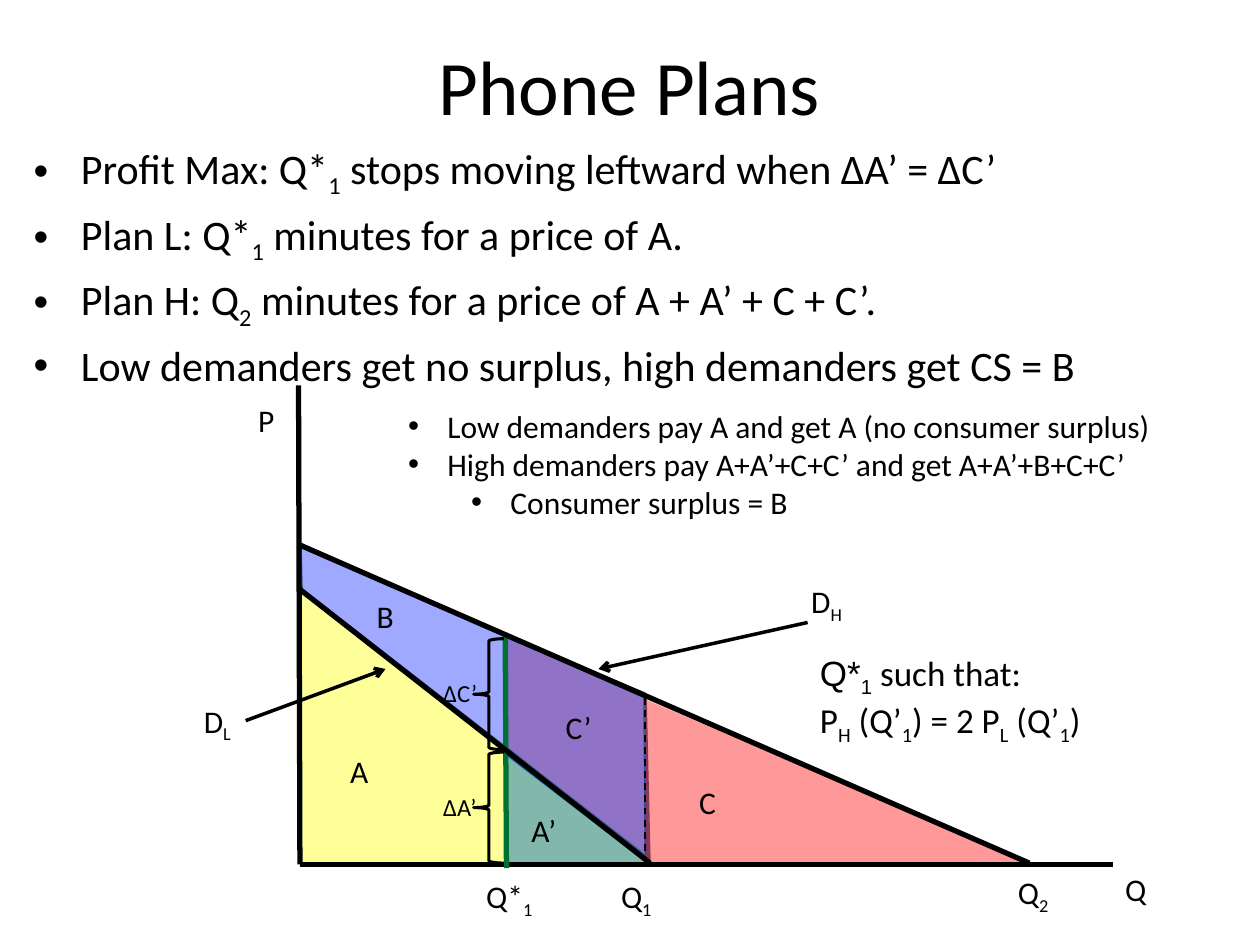
from lxml.etree import SubElement
from pptx import Presentation
from pptx.dml.color import RGBColor
from pptx.enum.dml import MSO_LINE
from pptx.enum.shapes import MSO_CONNECTOR, MSO_SHAPE
from pptx.enum.text import MSO_ANCHOR, MSO_AUTO_SIZE, PP_ALIGN
from pptx.oxml.ns import qn
from pptx.util import Pt

BLACK = RGBColor(0x00, 0x00, 0x00)
YELLOW = RGBColor(0xFF, 0xFF, 0x00)
CRIMSON = RGBColor(0xC0, 0x00, 0x00)
TEAL = RGBColor(0x00, 0x70, 0xC0)
BLUE = RGBColor(0x0D, 0x2A, 0xFF)
RED = RGBColor(0xFF, 0x00, 0x00)
GREEN = RGBColor(0x00, 0x70, 0x33)
OUTLINE = RGBColor(0x3A, 0x5F, 0x8C)
FONT = "Calibri"


def points(*values):
    return [Pt(v) for v in values]


def fill_area(sp, color, alpha):
    sp.shadow.inherit = False
    sp.fill.solid()
    sp.fill.fore_color.rgb = color
    clr = sp.fill._xPr.find(".//" + qn("a:srgbClr"))
    SubElement(clr, qn("a:alpha")).set("val", str(alpha * 1000))


def add_triangle(s, box, color, alpha):
    sp = s.shapes.add_shape(MSO_SHAPE.RIGHT_TRIANGLE, *points(*box))
    fill_area(sp, color, alpha)
    sp.line.fill.background()


def add_polygon(s, corners, color, alpha):
    start, *rest = [points(*c) for c in corners]
    builder = s.shapes.build_freeform(*start, scale=1.0)
    builder.add_line_segments(rest, close=True)
    sp = builder.convert_to_shape()
    fill_area(sp, color, alpha)
    sp.line.color.rgb = OUTLINE
    sp.line.width = Pt(2)


def add_line(s, ends, width=3, color=BLACK, dashed=False, arrow=False):
    ln = s.shapes.add_connector(MSO_CONNECTOR.STRAIGHT, *points(*ends))
    ln.line.color.rgb = color
    ln.line.width = Pt(width)
    if dashed:
        ln.line.dash_style = MSO_LINE.DASH
    if arrow:
        SubElement(ln.line._get_or_add_ln(), qn("a:tailEnd")).set("type", "arrow")
    SubElement(ln._element.spPr, qn("a:effectLst"))


def add_brace(s, top):
    sp = s.shapes.add_shape(MSO_SHAPE.LEFT_BRACE, *points(270.7, top, 17.3, 63.4))
    sp.shadow.inherit = False
    sp.fill.background()
    sp.line.color.rgb = BLACK
    sp.line.width = Pt(1.75)


def write_runs(p, text, size):
    p.font.name = FONT
    p.font.size = Pt(size)
    p.font.color.rgb = BLACK
    for i, part in enumerate(text.split("_")):
        if part:
            r = p.add_run()
            r.text = part
            if i % 2:
                r._r.get_or_add_rPr().set("baseline", "-25000")


def add_text(s, box, lines, size=18, wrap=False, fit=True):
    tf = s.shapes.add_textbox(*points(*box)).text_frame
    tf.word_wrap = wrap
    tf.auto_size = MSO_AUTO_SIZE.SHAPE_TO_FIT_TEXT if fit else MSO_AUTO_SIZE.NONE
    for i, line in enumerate(lines):
        p = tf.add_paragraph() if i else tf.paragraphs[0]
        write_runs(p, line, size)
    return tf


def add_bullet(p, margin, hanging):
    pPr = p._p.get_or_add_pPr()
    pPr.set("marL", str(Pt(margin)))
    pPr.set("indent", str(-Pt(hanging)))
    font = pPr.makeelement(qn("a:buFont"), {"typeface": "Arial"})
    char = pPr.makeelement(qn("a:buChar"), {"char": "•"})
    pPr.insert_element_before(font, "a:tabLst", "a:defRPr", "a:extLst")
    font.addnext(char)


def add_areas(s):
    add_triangle(s, (170.6, 336.2, 198, 157), YELLOW, 40)
    add_polygon(s, [(289.4, 363.6), (289.4, 430.6), (369.4, 491.8), (368.6, 396.7)],
                CRIMSON, 36)
    add_triangle(s, (289.4, 426.2, 82.1, 67), TEAL, 49)
    add_polygon(s, [(171.4, 311), (172.1, 337), (370.8, 491), (368.6, 398.2)], BLUE, 40)
    add_triangle(s, (368.6, 399.6, 219.6, 93.6), RED, 40)


def add_headings(s):
    tf = add_text(s, (5.8, 12.2, 707.8, 72), ["Phone Plans"], 44, True, False)
    tf.vertical_anchor = MSO_ANCHOR.MIDDLE
    tf.paragraphs[0].alignment = PP_ALIGN.CENTER

    tf = add_text(s, (12.2, 77.8, 671.8, 216), [
        "Profit Max: Q*_1_ stops moving leftward when ΔA’ = ΔC’",
        "Plan L: Q*_1_ minutes for a price of A.",
        "Plan H: Q_2_ minutes for a price of A + A’ + C + C’.",
        "Low demanders get no surplus, high demanders get CS = B",
    ], 24, True, False)
    for p in tf.paragraphs:
        p.space_before = Pt(4.8)
        add_bullet(p, 27, 27)


def add_notes_on_surplus(s):
    tf = add_text(s, (461.5, 368.6, 201.6, 55.4), [
        "Q*_1_ such that:",
        "P_H_ (Q’_1_) = 2 P_L_ (Q’_1_)",
    ], 20, True)
    for r in tf.paragraphs[0].runs[:2]:
        r.font.name = "Arial"

    tf = add_text(s, (226.1, 229, 443.5, 72.7), [
        "Low demanders pay A and get A (no consumer surplus)",
        "High demanders pay A+A’+C+C’ and get A+A’+B+C+C’",
        "Consumer surplus = B",
    ])
    for p, margin in zip(tf.paragraphs, (22.5, 22.5, 58.5)):
        add_bullet(p, margin, 22.5)
    tf.paragraphs[2].level = 1


def add_lines(s):
    add_line(s, (170.6, 220.3, 171.4, 493.9))
    add_line(s, (635.8, 493.9, 171.4, 493.9))
    add_line(s, (368.6, 493.2, 368.6, 396), 1, dashed=True)
    add_line(s, (140.4, 411.8, 220.3, 382.3), 2, arrow=True)
    add_line(s, (461.5, 355.7, 342, 382.3), 2, arrow=True)
    add_line(s, (288.7, 363.6, 289.4, 496.1), color=GREEN)
    add_line(s, (172.1, 311.8, 588.2, 493.2))
    add_line(s, (170.6, 336.2, 371.5, 493.2))
    for top in (429.8, 365):
        add_brace(s, top)


def add_labels(s):
    labels = [
        ("D_H_", 456.5, 329, 33.1), ("P", 140.4, 225.4, 23.8),
        ("Q", 635.8, 493.9, 26.6), ("Q_1_", 347.8, 497.5, 33.1),
        ("D_L_", 109.4, 397.4, 31), ("Q_2_", 574.6, 495.4, 33.1),
        ("C", 392.4, 444.2, 25.2), ("Q*_1_", 270.7, 497.5, 41.8),
        ("C’", 316.1, 401, 29.5), ("A", 193, 426.2, 25.2),
        ("B", 208.1, 337.7, 24.5), ("A’", 296.6, 460.1, 28.8),
    ]
    for text, left, top, width in labels:
        add_text(s, (left, top, width, 28.8), [text])
    for text, top, width in (("ΔA’", 449.3, 33.8), ("ΔC’", 383.8, 45.4)):
        add_text(s, (246.2, top, width, 24.5), [text], 14, True)


def main():
    prs = Presentation()
    prs.slide_width, prs.slide_height = points(720, 540)
    s = prs.slides.add_slide(prs.slide_layouts[6])
    add_areas(s)
    add_headings(s)
    add_lines(s)
    add_labels(s)
    add_notes_on_surplus(s)
    prs.save("out.pptx")


if __name__ == "__main__":
    main()
